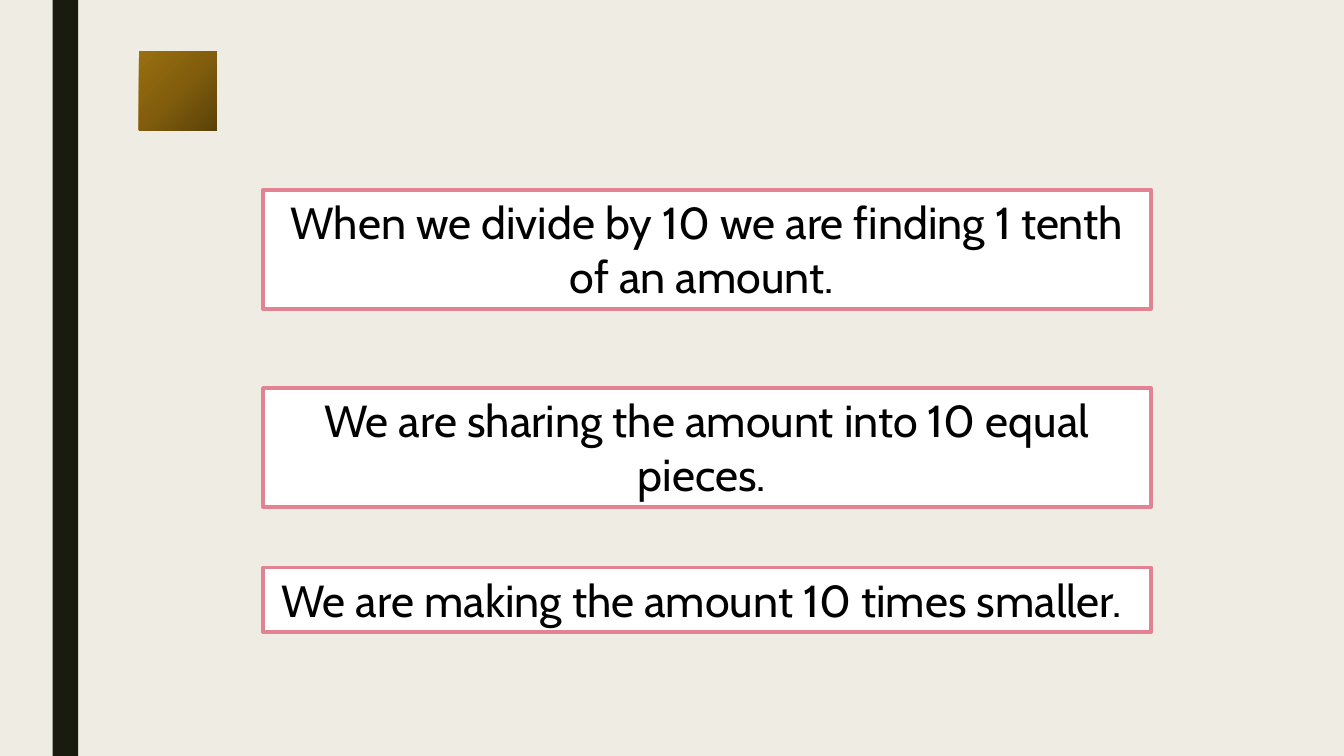
from dataclasses import dataclass

from lxml import etree
from pptx import Presentation
from pptx.dml.color import RGBColor
from pptx.enum.shapes import MSO_SHAPE
from pptx.enum.text import MSO_ANCHOR, MSO_AUTO_SIZE, PP_ALIGN
from pptx.oxml.ns import qn
from pptx.util import Cm, Pt

RECTANGLE = MSO_SHAPE.RECTANGLE
CENTER = PP_ALIGN.CENTER
TOP = MSO_ANCHOR.TOP
GROW_TO_FIT = MSO_AUTO_SIZE.SHAPE_TO_FIT_TEXT
BLANK_LAYOUT = 6


@dataclass(frozen=True)
class Theme:
    background: str = "EFEDE3"
    side_bar: str = "191B0E"
    card: str = "FFFFFF"
    card_border: str = "E28394"
    text: str = "000000"
    gold_stops: tuple = ((0, "5A4209"), (50, "815D0D"), (100, "996F0F"))
    font: str = "Cabin"
    text_size: int = 32
    border_width: float = 2.75


class SlideBuilder:
    def __init__(self, slide, theme):
        self.slide = slide
        self.theme = theme

    def paint_background(self):
        fill = self.slide.background.fill
        fill.solid()
        fill.fore_color.rgb = RGBColor.from_string(self.theme.background)

    def add_block(self, left, top, width, height, color):
        shape = self.slide.shapes.add_shape(
            RECTANGLE, Cm(left), Cm(top), Cm(width), Cm(height))
        shape.shadow.inherit = False
        shape.fill.solid()
        shape.fill.fore_color.rgb = RGBColor.from_string(color)
        shape.line.fill.background()
        return shape

    def add_gold_square(self, left, top, width, height):
        """Add a square shaded radially from its bottom right corner."""
        square = self.add_block(left, top, width, height, self.theme.gold_stops[0][1])
        square.fill.gradient()
        gradient = square.element.spPr.find(qn("a:gradFill"))
        for child in list(gradient):
            gradient.remove(child)
        stops = etree.SubElement(gradient, qn("a:gsLst"))
        for percent, color in self.theme.gold_stops:
            stop = etree.SubElement(stops, qn("a:gs"), pos=str(percent * 1000))
            etree.SubElement(stop, qn("a:srgbClr"), val=color)
        shading = etree.SubElement(gradient, qn("a:path"), path="circle")
        etree.SubElement(shading, qn("a:fillToRect"), l="100000", t="100000")

    def add_card(self, left, top, width, height, text):
        theme = self.theme
        card = self.add_block(left, top, width, height, theme.card)
        card.line.color.rgb = RGBColor.from_string(theme.card_border)
        card.line.width = Pt(theme.border_width)
        etree.SubElement(card.element.spPr.find(qn("a:ln")), qn("a:round"))
        frame = card.text_frame
        frame.word_wrap = True
        frame.vertical_anchor = TOP
        frame.auto_size = GROW_TO_FIT
        frame.text = text
        paragraph = frame.paragraphs[0]
        paragraph.alignment = CENTER
        font = paragraph.runs[0].font
        font.name = theme.font
        font.size = Pt(theme.text_size)
        font.color.rgb = RGBColor.from_string(theme.text)


def main():
    presentation = Presentation()
    presentation.slide_width = Cm(33.87)
    presentation.slide_height = Cm(19.05)
    slide = presentation.slides.add_slide(presentation.slide_layouts[BLANK_LAYOUT])
    theme = Theme()
    builder = SlideBuilder(slide, theme)

    builder.paint_background()
    builder.add_block(1.33, 0, 0.64, 19.05, theme.side_bar)
    builder.add_gold_square(3.5, 1.29, 1.97, 1.99)

    card_left, card_width = 6.63, 22.38
    statements = (
        (4.78, 3, "When we divide by 10 we are finding 1 tenth of an amount. "),
        (9.78, 3, "We are sharing the amount into 10 equal pieces. "),
        (14.3, 1.63, "We are making the amount 10 times smaller. "),
    )
    for top, height, text in statements:
        builder.add_card(card_left, top, card_width, height, text)

    presentation.save("out.pptx")


if __name__ == "__main__":
    main()
